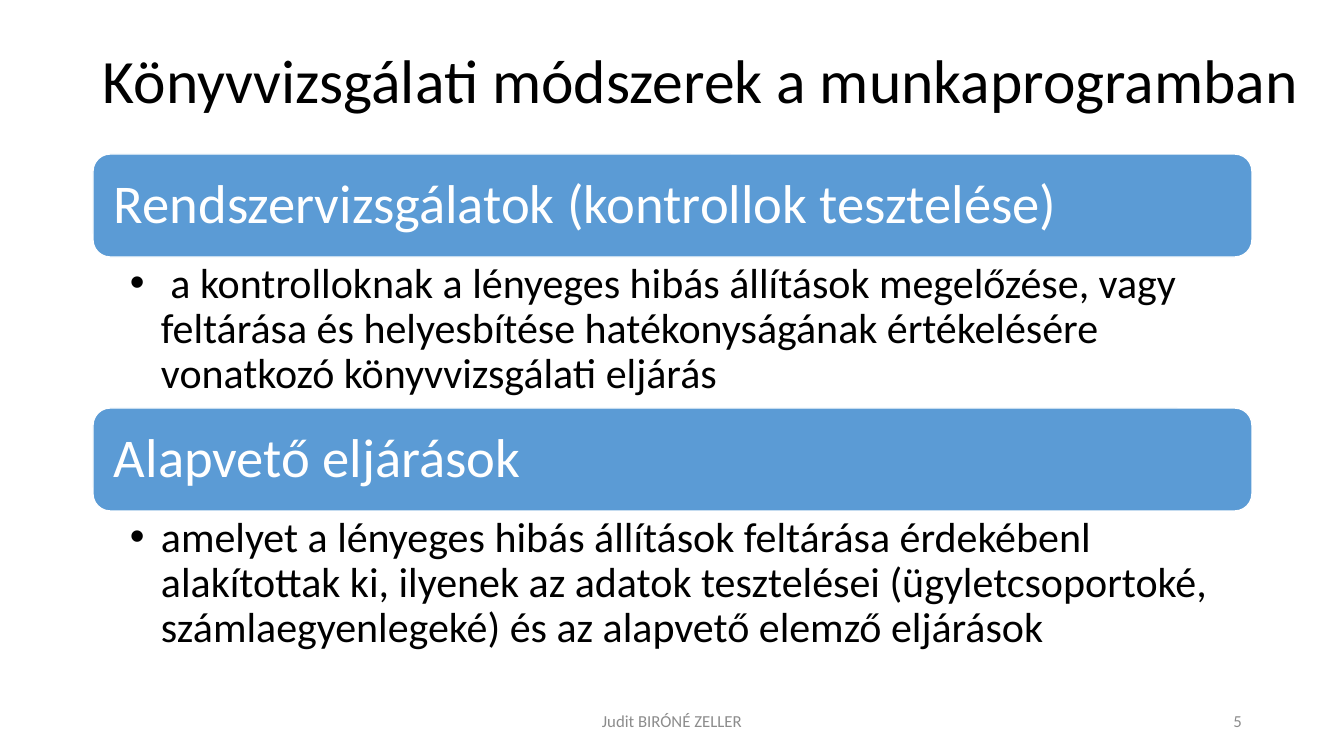
from pptx import Presentation
from pptx.dml.color import RGBColor
from pptx.enum.shapes import MSO_SHAPE
from pptx.enum.text import MSO_ANCHOR, MSO_AUTO_SIZE, PP_ALIGN
from pptx.util import Emu, Pt

ROUNDED = MSO_SHAPE.ROUNDED_RECTANGLE
TOP, MIDDLE = MSO_ANCHOR.TOP, MSO_ANCHOR.MIDDLE
LEFT, CENTER, RIGHT = PP_ALIGN.LEFT, PP_ALIGN.CENTER, PP_ALIGN.RIGHT
NO_FIT = MSO_AUTO_SIZE.NONE

BLACK = RGBColor(0x00, 0x00, 0x00)
WHITE = RGBColor(0xFF, 0xFF, 0xFF)
BLUE = RGBColor(0x5B, 0x9B, 0xD5)
GRAY = RGBColor(0x8C, 0x8C, 0x8C)

FONT = "Calibri"
TWO_CONTENT_LAYOUT = 3
SLIDE_WIDTH, SLIDE_HEIGHT = 1344, 756
MARGIN, CONTENT_WIDTH = 93, 1159
BAND_TOP, BAND_HEIGHT, LIST_HEIGHT = 154, 103, 151
BULLET_INDENT = 31
FOOTER_TOP, FOOTER_HEIGHT = 701, 40

SECTIONS = [
    ("Rendszervizsgálatok (kontrollok tesztelése)",
     " a kontrolloknak a lényeges hibás állítások megelőzése, vagy feltárása "
     "és helyesbítése hatékonyságának értékelésére vonatkozó "
     "könyvvizsgálati eljárás"),
    ("Alapvető eljárások",
     "amelyet a lényeges hibás állítások feltárása érdekébenl alakítottak ki, "
     "ilyenek az adatok tesztelései (ügyletcsoportoké, számlaegyenlegeké) "
     "és az alapvető elemző eljárások"),
]


def px(length):
    """Turn pixels (100.8 to the inch) into EMU."""
    return Emu(round(length * 914400 / 100.8))


class SlideBuilder:
    def __init__(self, slide):
        self.slide = slide

    def place(self, shape, left, top, width, height):
        shape.left, shape.top = px(left), px(top)
        shape.width, shape.height = px(width), px(height)

    def set_text(self, shape, text, size, color, align=LEFT, anchor=MIDDLE,
                 insets=(10, 5, 10, 5), line_spacing=0.9):
        """Fill a shape with one styled paragraph and return it."""
        frame = shape.text_frame
        frame.word_wrap = True
        frame.auto_size = NO_FIT
        frame.vertical_anchor = anchor
        (frame.margin_left, frame.margin_top,
         frame.margin_right, frame.margin_bottom) = map(px, insets)
        para = frame.paragraphs[0]
        para.text = text
        para.alignment = align
        para.line_spacing = line_spacing
        para.space_before = Pt(0)
        para.font.name = FONT
        para.font.size = Pt(size)
        para.font.color.rgb = color
        return para

    def title(self, text):
        title = self.slide.shapes.title
        self.place(title, MARGIN, 40, 1220, 88)
        self.set_text(title, text, 44, BLACK)

    def band(self, text, top):
        band = self.slide.shapes.add_shape(
            ROUNDED, px(MARGIN), px(top), px(CONTENT_WIDTH), px(BAND_HEIGHT))
        band.shadow.inherit = False
        band.fill.solid()
        band.fill.fore_color.rgb = BLUE
        band.line.color.rgb = WHITE
        band.line.width = Pt(1)
        self.set_text(band, text, 39, WHITE, insets=(16, 16, 16, 16))

    def bullet_list(self, placeholder_index, text, top):
        body = self.slide.placeholders[placeholder_index]
        self.place(body, MARGIN, top, CONTENT_WIDTH, LIST_HEIGHT)
        para = self.set_text(body, text, 30, BLACK, anchor=TOP,
                             insets=(37, 5, 30, 5))
        properties = para._p.get_or_add_pPr()
        properties.set("marL", str(px(BULLET_INDENT)))
        properties.set("indent", str(-px(BULLET_INDENT)))

    def footer(self, text, left, width, align):
        box = self.slide.shapes.add_textbox(
            px(left), px(FOOTER_TOP), px(width), px(FOOTER_HEIGHT))
        self.set_text(box, text, 12, GRAY, align, line_spacing=1.0)


def main():
    deck = Presentation()
    deck.slide_width, deck.slide_height = px(SLIDE_WIDTH), px(SLIDE_HEIGHT)
    layout = deck.slide_layouts[TWO_CONTENT_LAYOUT]
    page = SlideBuilder(deck.slides.add_slide(layout))

    page.title("Könyvvizsgálati módszerek a munkaprogramban")
    for index, (heading, description) in enumerate(SECTIONS):
        top = BAND_TOP + index * (BAND_HEIGHT + LIST_HEIGHT)
        page.band(heading, top)
        page.bullet_list(index + 1, description, top + BAND_HEIGHT)
    page.footer("Judit BIRÓNÉ ZELLER", 445, 454, CENTER)
    page.footer("5", 950, 302, RIGHT)

    deck.save("out.pptx")


if __name__ == "__main__":
    main()
